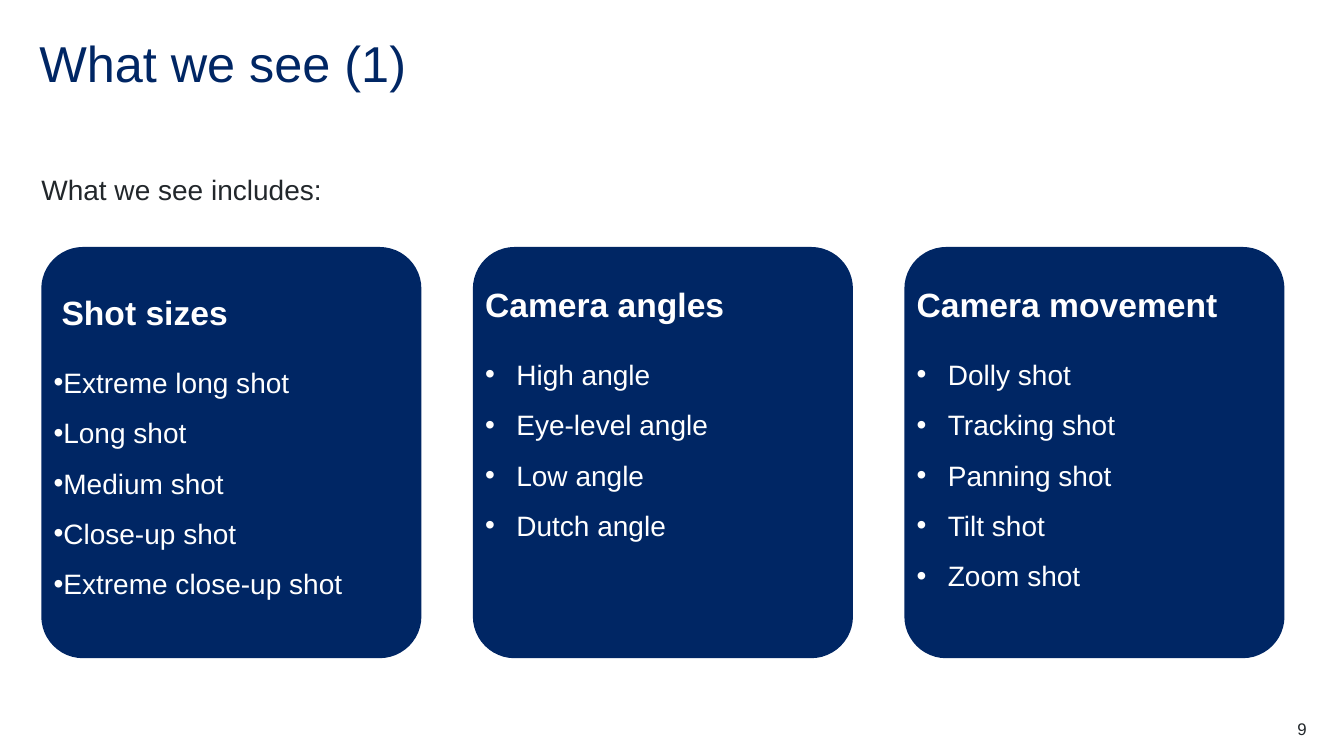
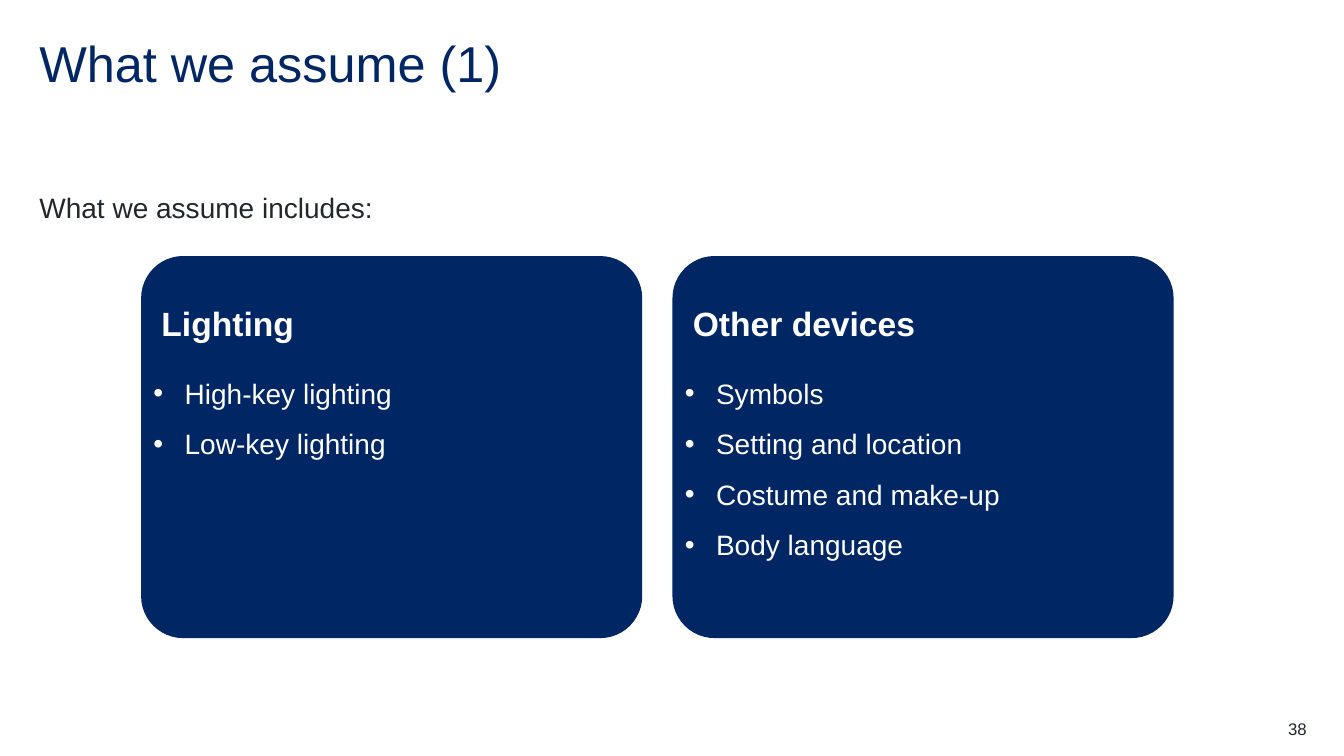
import pptx
import pptx.util
import pptx.dml.color
import pptx.enum.shapes
import pptx.enum.text
from dataclasses import dataclass
from pptx.util import Inches

RGB = pptx.dml.color.RGBColor.from_string
ALIGN = pptx.enum.text.PP_ALIGN


@dataclass(frozen=True)
class Theme:
    font: str = "Arial"
    navy: str = "002664"
    ink: str = "22272B"
    white: str = "FFFFFF"
    title: int = 36
    heading: int = 24
    body: int = 20
    footer: int = 12
    spacing: float = 1.5
    gap_after: int = 12
    corner: float = 0.11


theme = Theme()


def style(paragraph, size, color, bold=False, spacing=theme.spacing, after=0):
    """Apply type and spacing to a filled paragraph."""
    paragraph.line_spacing = spacing
    paragraph.space_before = pptx.util.Pt(0)
    paragraph.space_after = pptx.util.Pt(after)
    for run in paragraph.runs:
        run.font.name = theme.font
        run.font.size = pptx.util.Pt(size)
        run.font.bold = bold
        run.font.color.rgb = RGB(color)


def prepare(frame, top=0):
    """Wrap the text from the top, with no inset except the given one."""
    frame.word_wrap = True
    frame.vertical_anchor = pptx.enum.text.MSO_ANCHOR.TOP
    frame.margin_left = frame.margin_right = frame.margin_bottom = 0
    frame.margin_top = Inches(top)
    return frame


# Content: each card is heading, heading indent, bullet indent, top inset, items
slides = [
    {
        "title": "What we see (1)", "number": "9",
        "intro": "What we see includes:", "intro_at": (0.41, 1.54),
        "first_card": (0.41, 2.45), "card_size": (3.77, 4.08), "pitch": 4.28,
        "cards": [
            ("Shot sizes", 0.08, 0.08, 0.12,
             ["Extreme long shot", "Long shot", "Medium shot",
              "Close-up shot", "Extreme close-up shot"]),
            ("Camera angles", 0, 0.31, 0.04,
             ["High angle", "Eye-level angle", "Low angle", "Dutch angle"]),
            ("Camera movement", 0, 0.31, 0.04,
             ["Dolly shot", "Tracking shot", "Panning shot", "Tilt shot",
              "Zoom shot"]),
        ],
    },
    {
        "title": "What we assume (1)", "number": "38",
        "intro": "What we assume includes:", "intro_at": (0.39, 1.72),
        "first_card": (1.4, 2.54), "card_size": (4.97, 3.79), "pitch": 5.27,
        "cards": [
            ("Lighting", 0.08, 0.31, 0.14,
             ["High-key lighting", "Low-key lighting"]),
            ("Other devices", 0.08, 0.31, 0.14,
             ["Symbols", "Setting and location", "Costume and make-up",
              "Body language"]),
        ],
    },
]

deck = pptx.Presentation()
deck.slide_width, deck.slide_height = Inches(13.33), Inches(7.5)

for content in slides:
    slide = deck.slides.add_slide(deck.slide_layouts[6])

    # Title, introduction and page number
    labels = [
        (content["title"], (0.39, 0.39), (12.56, 0.6), theme.title,
         theme.navy, 0.9, ALIGN.LEFT),
        (content["intro"], content["intro_at"], (12.09, 0.5), theme.body,
         theme.ink, theme.spacing, ALIGN.LEFT),
        (content["number"], (12.17, 7.13), (0.79, 0.2), theme.footer,
         theme.ink, 1.0, ALIGN.RIGHT),
    ]
    for text, place, extent, size, color, spacing, align in labels:
        label = slide.shapes.add_textbox(*map(Inches, place + extent))
        line = prepare(label.text_frame).paragraphs[0]
        line.text = text
        line.alignment = align
        style(line, size, color, spacing=spacing)

    # Row of cards
    left, top = content["first_card"]
    for column, (heading, heading_indent, bullet_indent, inset, items) in enumerate(content["cards"]):
        card = slide.shapes.add_shape(
            pptx.enum.shapes.MSO_SHAPE.ROUNDED_RECTANGLE,
            Inches(left + column * content["pitch"]), Inches(top),
            *map(Inches, content["card_size"]))
        card.adjustments[0] = theme.corner
        card.shadow.inherit = False
        card.fill.solid()
        card.fill.fore_color.rgb = RGB(theme.navy)
        card.line.fill.background()

        frame = prepare(card.text_frame, inset)
        frame.text = "\n".join([heading, *items])
        for row, line in enumerate(frame.paragraphs):
            line.alignment = ALIGN.LEFT
            if row == 0:
                style(line, theme.heading, theme.white, bold=True, after=theme.gap_after)
                line._p.get_or_add_pPr().set("marL", str(Inches(heading_indent)))
                continue
            style(line, theme.body, theme.white)
            properties = line._p.get_or_add_pPr()
            properties.set("marL", str(Inches(bullet_indent)))
            properties.set("indent", str(-Inches(bullet_indent)))
            for tag, key, value in [("a:buFont", "typeface", theme.font), ("a:buChar", "char", "•")]:
                bullet = pptx.oxml.xmlchemy.OxmlElement(tag)
                bullet.set(key, value)
                properties.append(bullet)

deck.save("out.pptx")
